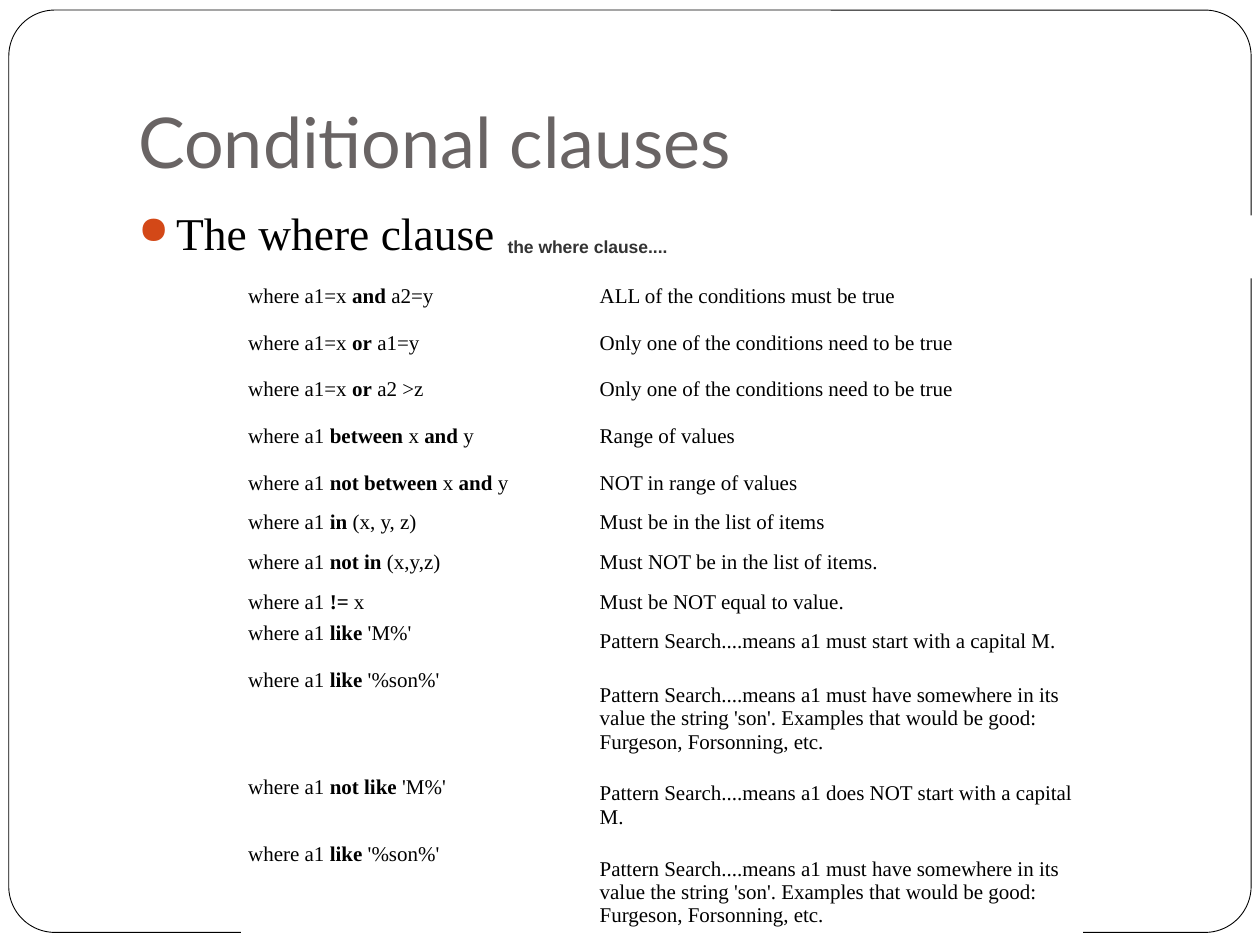
"""Build the slide on conditional clauses in SQL."""
import pptx
import pptx.util
import pptx.dml.color
import pptx.enum.shapes
import pptx.enum.text
from dataclasses import dataclass
from lxml import etree

Inches = pptx.util.Inches
Pt = pptx.util.Pt
SHAPE = pptx.enum.shapes.MSO_SHAPE
ANCHOR = pptx.enum.text.MSO_ANCHOR

TITLE = "Conditional clauses"
BULLET = "The where clause"
CAPTION = "the where clause...."
ONE_TRUE = "Only one of the conditions need to be true"
HAS_SON = (
    "Pattern Search....means a1 must have somewhere in its value the string "
    "'son'. Examples that would be good: Furgeson, Forsonning, etc."
)
CLAUSES = [
    ("where a1=x *and* a2=y", "ALL of the conditions must be true", 0.37),
    ("where a1=x *or* a1=y", ONE_TRUE, 0.37),
    ("where a1=x *or* a2 >z", ONE_TRUE, 0.37),
    ("where a1 *between* x *and* y", "Range of values", 0.37),
    ("where a1 *not between* x *and* y", "NOT in range of values", 0.37),
    ("where a1 *in* (x, y, z)", "Must be in the list of items", 0.21),
    ("where a1 *not in* (x,y,z)", "Must NOT be in the list of items.", 0.37),
    ("where a1 *!=* x", "Must be NOT equal to value.", 0.21),
    ("where a1 *like* 'M%'", "Pattern Search....means a1 must start with a capital M.", 0.37),
    ("where a1 *like* '%son%'", HAS_SON, 0.85),
    ("where a1 *not like* 'M%'", "Pattern Search....means a1 does NOT start with a capital M.", 0.53),
    ("where a1 *like* '%son%'", HAS_SON, 0.85),
]
COLUMNS = (2.79, 3.88)
TOP_ANCHORED_FROM = 8


@dataclass
class Theme:
    """Colours, fonts and type sizes."""
    white: str = "FFFFFF"
    black: str = "000000"
    title: str = "696464"
    accent: str = "D34817"
    caption: str = "333333"
    heading_font: str = "Lato"
    body_font: str = "Times New Roman"
    caption_font: str = "Arial"
    title_size: int = 40
    bullet_size: int = 26
    cell_size: int = 12
    caption_size: int = 10


THEME = Theme()


def rgb(value):
    """Return a colour object."""
    return pptx.dml.color.RGBColor.from_string(value)


def style_run(r, size, font, color, bold=False):
    """Format one run."""
    r.font.size, r.font.name, r.font.bold = Pt(size), font, bold
    r.font.color.rgb = rgb(color)


def add_panel(slide, kind, box):
    """Add a white shape without line or shadow."""
    s = slide.shapes.add_shape(kind, *map(Inches, box))
    s.shadow.inherit = False
    s.fill.solid()
    s.fill.fore_color.rgb = rgb(THEME.white)
    s.line.fill.background()
    return s


def add_text(slide, box, text, size, font, color):
    """Add a wrapped text box of one paragraph."""
    s = slide.shapes.add_textbox(*map(Inches, box))
    tf = s.text_frame
    tf.word_wrap = True
    tf.text = text
    style_run(tf.paragraphs[0].runs[0], size, font, color)
    return tf


def add_bullet(p, indent):
    """Give a paragraph a coloured round bullet."""
    pPr = p._p.get_or_add_pPr()
    pPr.set("marL", str(Inches(indent)))
    pPr.set("indent", str(Inches(-indent)))
    ns = pptx.oxml.ns.qn
    color = etree.SubElement(pPr, ns("a:buClr"))
    etree.SubElement(color, ns("a:srgbClr"), val=THEME.accent)
    etree.SubElement(pPr, ns("a:buSzPct"), val="85000")
    etree.SubElement(pPr, ns("a:buChar"), char="●")


def fill_cell(cell, text, anchor):
    """Write a cell, with bold parts between asterisks."""
    cell.fill.solid()
    cell.fill.fore_color.rgb = rgb(THEME.white)
    cell.vertical_anchor = anchor
    cell.margin_left = cell.margin_right = Inches(0.05)
    cell.margin_top = cell.margin_bottom = Inches(0.03)
    p = cell.text_frame.paragraphs[0]
    for i, part in enumerate(text.split("*")):
        r = p.add_run()
        r.text = part
        style_run(r, THEME.cell_size, THEME.body_font, THEME.black, i % 2 == 1)


def add_clauses(slide, left, top):
    """Add the table of clauses and meanings."""
    size = sum(COLUMNS), sum(row[2] for row in CLAUSES)
    s = slide.shapes.add_table(
        len(CLAUSES), len(COLUMNS), *map(Inches, (left, top, *size)))
    table = s.table
    table.first_row = table.horz_banding = False
    for column, width in zip(table.columns, COLUMNS):
        column.width = Inches(width)
    for i, (clause, meaning, height) in enumerate(CLAUSES):
        table.rows[i].height = Inches(height)
        anchor = ANCHOR.TOP if i >= TOP_ANCHORED_FROM else ANCHOR.MIDDLE
        fill_cell(table.cell(i, 0), clause, anchor)
        fill_cell(table.cell(i, 1), meaning, ANCHOR.MIDDLE)


def main():
    """Compose and save the slide."""
    prs = pptx.Presentation()
    prs.slide_width, prs.slide_height = Inches(10), Inches(7.5)
    slide = prs.slides.add_slide(prs.slide_layouts[6])

    frame = add_panel(slide, SHAPE.ROUNDED_RECTANGLE, (0.07, 0.08, 9.86, 7.32))
    frame.adjustments[0] = 0.05
    frame.line.color.rgb = rgb(THEME.black)
    frame.line.width = Pt(0.5)

    tf = add_text(slide, (1, 0.3, 8.5, 1.25), TITLE,
                  THEME.title_size, THEME.heading_font, THEME.title)
    tf.vertical_anchor = ANCHOR.BOTTOM
    tf.margin_bottom = Inches(0.1)

    tf = add_text(slide, (1, 1.58, 8.5, 5), BULLET,
                  THEME.bullet_size, THEME.body_font, THEME.black)
    tf.paragraphs[0].space_before = Pt(5.8)
    add_bullet(tf.paragraphs[0], 0.3)

    add_clauses(slide, 1.92, 2.17)

    tf = add_panel(slide, SHAPE.RECTANGLE, (3.93, 1.71, 6.07, 0.5)).text_frame
    tf.text = CAPTION
    tf.vertical_anchor = ANCHOR.MIDDLE
    p = tf.paragraphs[0]
    p.alignment = pptx.enum.text.PP_ALIGN.LEFT
    style_run(p.runs[0], THEME.caption_size, THEME.caption_font, THEME.caption, True)

    prs.save("out.pptx")


if __name__ == "__main__":
    main()
